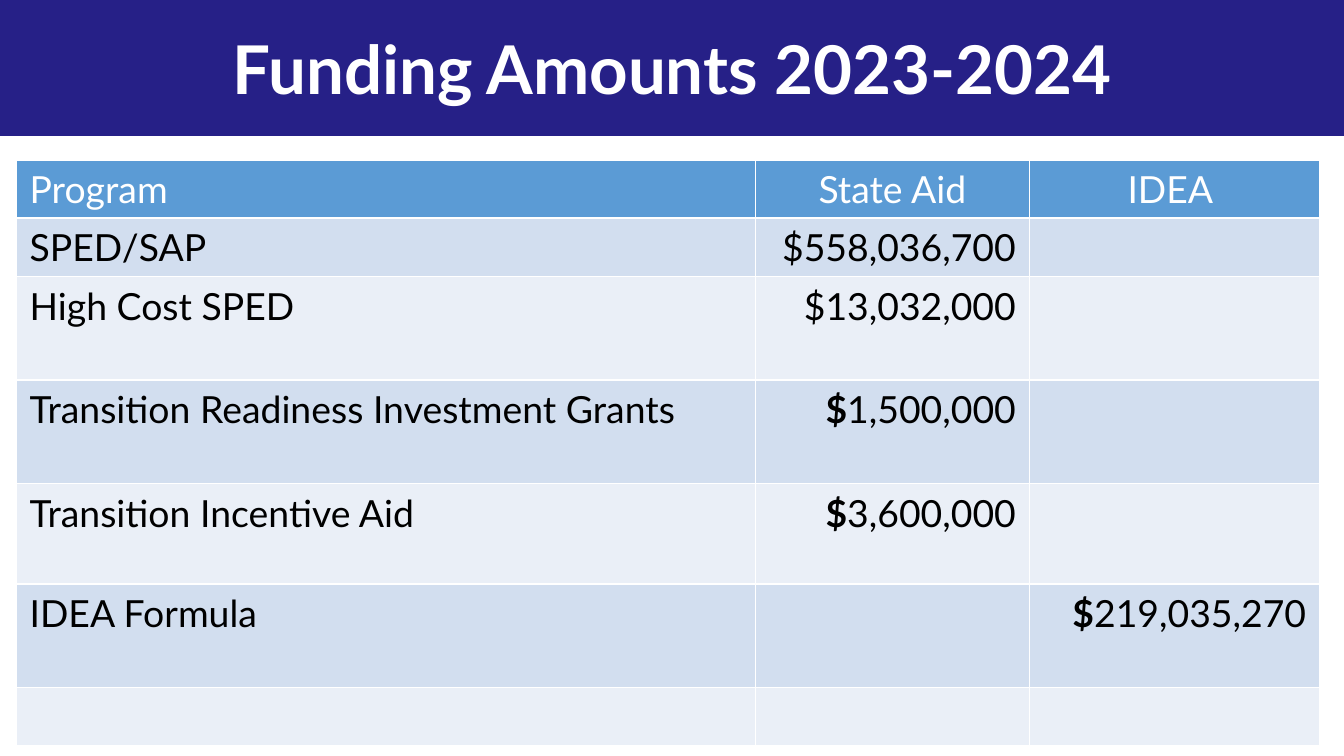
"""Builds the funding amounts slide: a title band above a table of programs."""
from lxml import etree
from pptx import Presentation, util as u
from pptx.dml.color import RGBColor
from pptx.enum import shapes, text
from pptx.oxml.ns import qn

COLORS = {"band": "262087", "head": "5B9BD5", "odd": "D2DEEF", "even": "EAEFF7",
          "light": "FFFFFF", "dark": "000000"}
ALIGN = {"l": text.PP_ALIGN.LEFT, "c": text.PP_ALIGN.CENTER, "r": text.PP_ALIGN.RIGHT}
COLS = [5.5, 2.04, 2.16]
SHORT, TALL = 0.43, 0.77
ROWS = [
    (SHORT, ["Program"], ["State Aid"], ["IDEA "]),
    (SHORT, ["SPED/SAP"], ["$558,036,700"], []),
    (TALL, ["High Cost SPED"], ["$13,032,000"], []),
    (TALL, ["Transition Readiness Investment Grants"], ["$", "1,500,000"], []),
    (0.75, ["Transition Incentive Aid"], ["$", "3,600,000"], []),
    (TALL, ["IDEA Formula"], [], ["$", "219,035,270"]),
    (SHORT, [], [], []),
]


def add_run(p, words, size, color, bold):
    r = p.add_run()
    r.text = words
    r.font.name, r.font.size, r.font.bold = "Lato", u.Pt(size), bold
    r.font.color.rgb = RGBColor.from_string(COLORS[color])


def add_border(cell, side):
    ln = etree.SubElement(cell._tc.get_or_add_tcPr(), qn(f"a:ln{side}"), w=str(u.Pt(1)))
    fill = etree.SubElement(ln, qn("a:solidFill"))
    etree.SubElement(fill, qn("a:srgbClr"), val=COLORS["light"])


prs = Presentation()
prs.slide_width = W = u.Inches(10)
prs.slide_height = H = W * 9 // 16
s = prs.slides.add_slide(prs.slide_layouts[6])

band = s.shapes.add_shape(shapes.MSO_SHAPE.RECTANGLE, 0, 0, W, int(H * 0.18))
band.shadow.inherit = False
band.fill.solid()
band.fill.fore_color.rgb = RGBColor.from_string(COLORS["band"])
band.line.fill.background()

title = s.shapes.add_textbox(0, 0, W, int(H * 0.18))
tf = title.text_frame
tf.word_wrap = True
tf.vertical_anchor = text.MSO_ANCHOR.MIDDLE
tf.margin_left = tf.margin_right = tf.margin_top = tf.margin_bottom = u.Inches(0.1)
p = tf.paragraphs[0]
p.alignment = ALIGN["c"]
add_run(p, "Funding Amounts 2023-2024", 36, "light", True)

height = sum(row[0] for row in ROWS)
frame = s.shapes.add_table(len(ROWS), len(COLS), u.Inches(0.12), u.Inches(1.19),
                           u.Inches(sum(COLS)), u.Inches(height))
table = frame.table
for col, width in zip(table.columns, COLS):
    col.width = u.Inches(width)

for i, (row_height, *cells) in enumerate(ROWS):
    table.rows[i].height = u.Inches(row_height)
    fill = "head" if i == 0 else "odd" if i % 2 else "even"
    for j, runs in enumerate(cells):
        cell = table.cell(i, j)
        for side in "LRTB":
            add_border(cell, side)
        cell.fill.solid()
        cell.fill.fore_color.rgb = RGBColor.from_string(COLORS[fill])
        p = cell.text_frame.paragraphs[0]
        p.alignment = ALIGN["l" if j == 0 else "c" if i == 0 else "r"]
        for words in runs:
            add_run(p, words, 20, "dark" if i else "light", words == "$")

prs.save("out.pptx")
